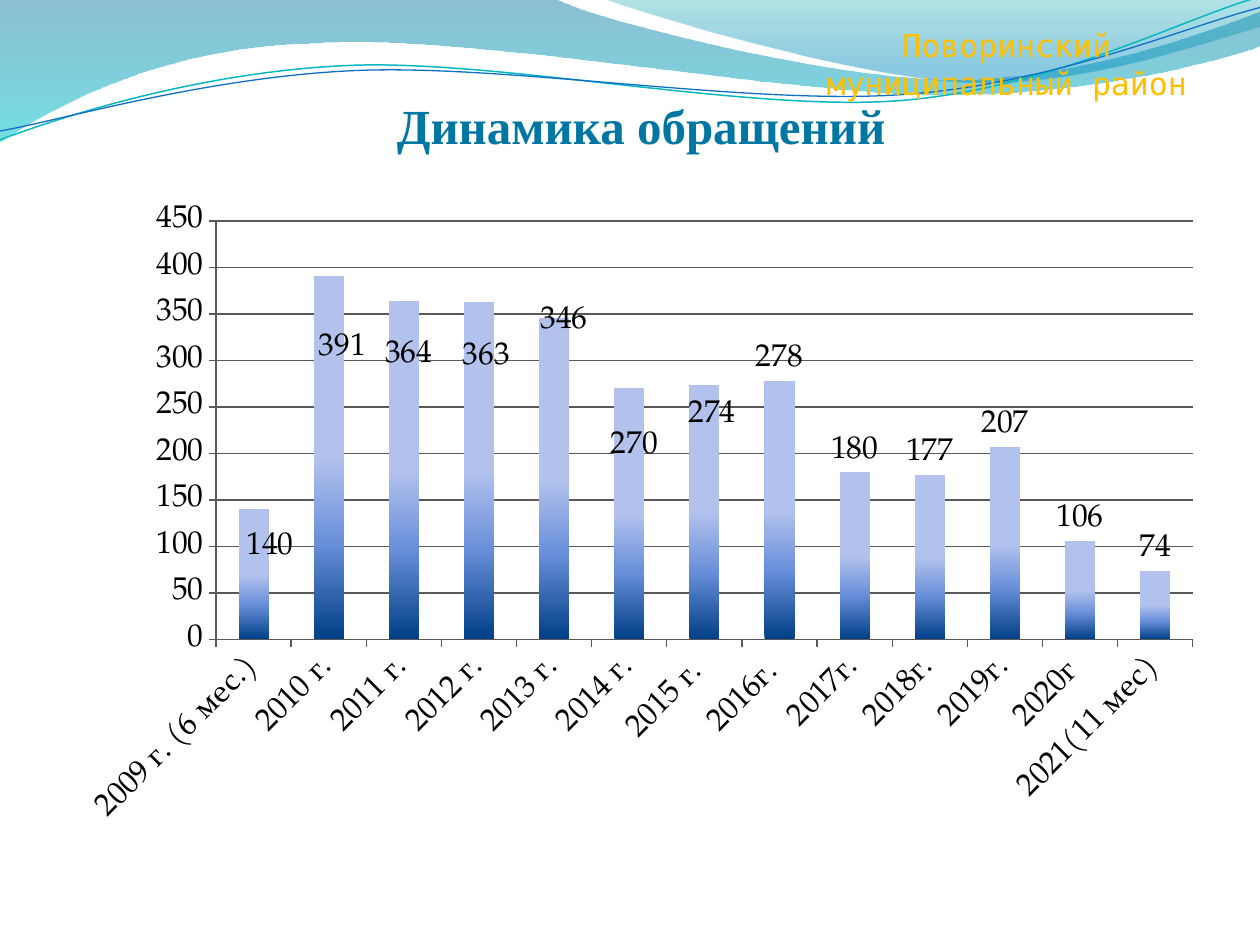
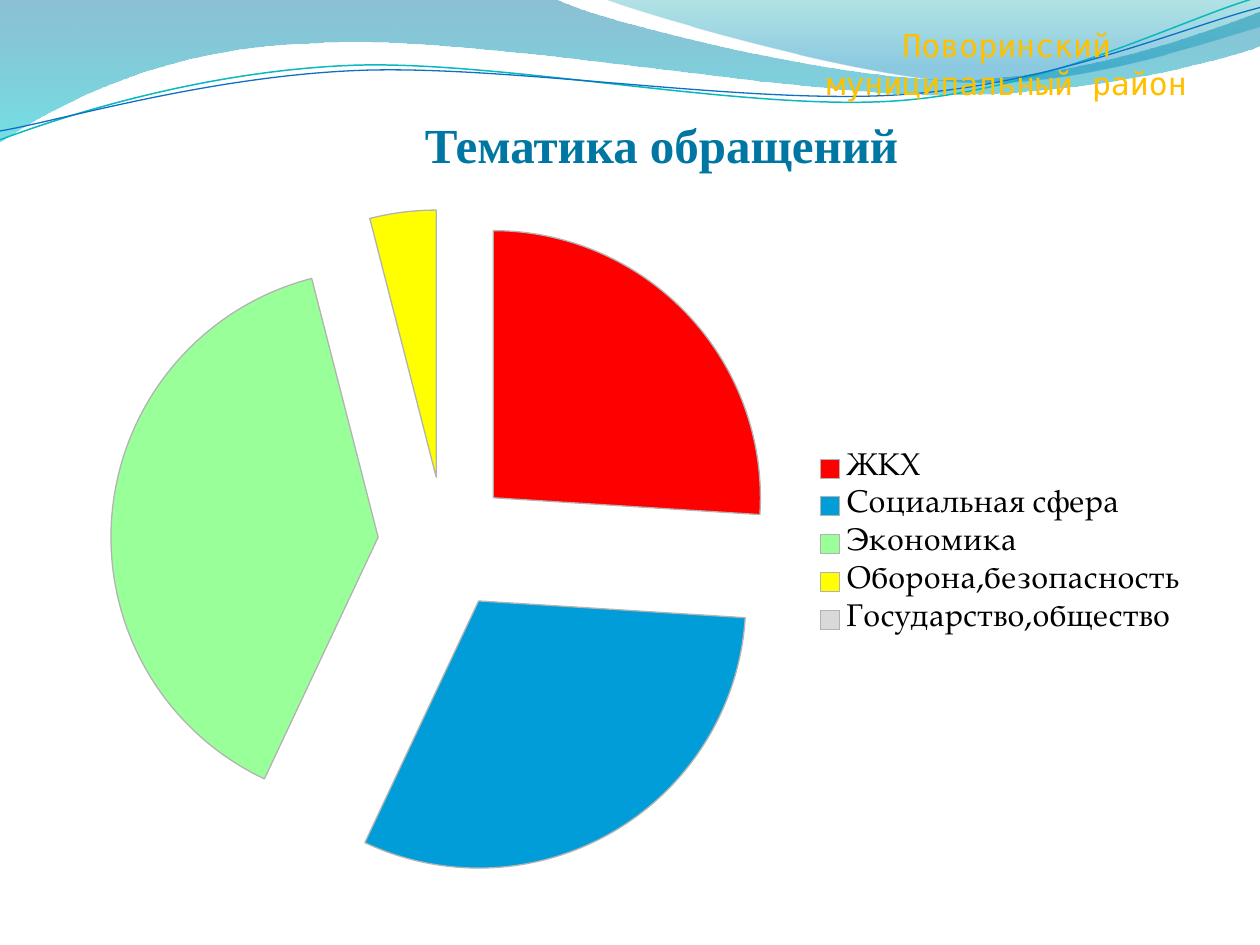
from lxml.etree import SubElement
from pptx import Presentation
from pptx.chart.data import CategoryChartData
from pptx.dml.color import RGBColor
from pptx.enum.chart import (XL_CHART_TYPE, XL_LABEL_POSITION,
                             XL_LEGEND_POSITION, XL_TICK_MARK)
from pptx.enum.text import MSO_ANCHOR, MSO_AUTO_SIZE, PP_ALIGN
from pptx.oxml import parse_xml
from pptx.oxml.ns import nsdecls, qn
from pptx.util import Inches, Pt

HEADER = "Поворинский муниципальный район"
GOLD, BLUE, AXIS, EDGE = "FFC000", "0076A3", "595959", "B3B3B3"
CHART_FONT = "TeX Gyre Pagella"

# Each outline is a start point, then lines (x, y) and curves (three points).
# A gradient stop is (percent, colour, opacity percent).
BANDS = [
    ([(0, 0), (4.4, -0.01), (4.76, 0.17, 6.64, 0.63, 7.58, 0.63),
      (8.53, 0.63, 9.58, 0.26, 10, 0.09), (10.01, 0.36),
      (9.83, 0.44, 8.7, 0.76, 7.46, 0.75),
      (6.22, 0.75, 3.82, 0.28, 2.57, 0.34),
      (1.29, 0.36, 0.46, 0.83, -0.01, 1.13)],
     [(0, "0074A1", 45), (100, "00C6CF", 55)]),
    ([(4.79, -0.01), (5.09, 0.11, 6.82, 0.62, 7.69, 0.65),
      (8.56, 0.69, 9.61, 0.32, 10, 0.21), (10, 0)],
     [(0, "00A1A9", 30), (80, "008BBF", 45)]),
]
WAVES = [
    ([(0, 1.11), (0.48, 0.93, 1.58, 0.57, 2.77, 0.52),
      (3.95, 0.47, 5.93, 0.89, 7.13, 0.8),
      (8.33, 0.71, 9.38, 0.15, 9.98, -0.02)], "0AB8BF", 0.85),
    ([(0, 1.04), (0.47, 0.96, 1.64, 0.61, 2.83, 0.56),
      (4.03, 0.51, 5.97, 0.84, 7.17, 0.75),
      (8.36, 0.67, 9.41, 0.21, 10, 0.06)], "0F6FC6", 0.75),
]

YEARS = [("2009 г. (6 мес.)", 140), ("2010 г.", 391), ("2011 г.", 364),
         ("2012 г.", 363), ("2013 г.", 346), ("2014 г.", 270),
         ("2015 г. ", 274), ("2016г. ", 278), ("2017г.", 180),
         ("2018г.", 177), ("2019г.", 207), ("2020г ", 106),
         ("2021(11 мес)", 74)]
# Shift of the first labels from the bar tops, in inches.
SHIFTS = [(0.13, 0.47), (0.11, 0.74), (0.04, 0.6), (0.06, 0.61),
          (0.08, 0.2), (0.04, 0.63), (0.06, 0.41)]
BAR_STOPS = [(0, "003F87", 100), (27, "6A90DA", 100), (50, "B2C2ED", 100)]

TOPICS = [("ЖКХ", 26, "FF0000"), ("Социальная сфера", 31, "009DD9"),
          ("Экономика", 39, "99FF99"), ("Оборона,безопасность", 4, "FFFF00"),
          ("Государство,общество", 0, "D9D9D9")]


def rgb(code):
    return RGBColor.from_string(code)


def place(shape, box):
    shape.left, shape.top, shape.width, shape.height = map(Inches, box)


def write(shape, text, size=18, font="Times New Roman", color=BLUE, bold=False,
          align=PP_ALIGN.CENTER, anchor=MSO_ANCHOR.TOP, indent=0, wrap=True):
    frame = shape.text_frame
    frame.word_wrap, frame.vertical_anchor = wrap, anchor
    frame.auto_size = MSO_AUTO_SIZE.SHAPE_TO_FIT_TEXT
    par = frame.paragraphs[0]
    par.alignment = align
    props = par._p.get_or_add_pPr()
    props.set("marL", "0")
    props.set("indent", str(Inches(indent)))
    run = par.add_run()
    run.text = text
    style(run.font, size, font, color, bold)


def style(font, size=18, name=CHART_FONT, color="000000", bold=False):
    font.size, font.name, font.bold = Pt(size), name, bold
    font.color.rgb = rgb(color)


def blend(fill, host, stops, angle):
    """Fill with a linear gradient; host is the element that holds the fill."""
    fill.gradient()
    fill.gradient_angle = angle
    holder = next(host.iter(qn("a:gsLst")))
    for old in list(holder):
        holder.remove(old)
    for pos, code, alpha in stops:
        stop = SubElement(holder, qn("a:gs"), pos=str(pos * 1000))
        tint = SubElement(stop, qn("a:srgbClr"), val=code)
        if alpha < 100:
            SubElement(tint, qn("a:alpha"), val=str(alpha * 1000))


def draw(slide, outline, closed):
    """Build the outline from its corners, then bend its curved parts."""
    first, *rest = [tuple(map(Inches, part[-2:])) for part in outline]
    pen = slide.shapes.build_freeform(*first)
    pen.add_line_segments(rest, close=closed)
    shape = pen.convert_to_shape()
    shape.shadow.inherit = False
    sides = list(shape._element.iter(qn("a:lnTo")))
    for side, part in zip(sides, outline[1:]):
        if len(part) == 2:
            continue
        side.tag = qn("a:cubicBezTo")
        side.remove(side[0])
        for x, y in zip(part[::2], part[1::2]):
            SubElement(side, qn("a:pt"), x=str(Inches(x) - shape.left),
                       y=str(Inches(y) - shape.top))
    return shape


def decorate(slide):
    """Draw the bands and waves, then hand them to the slide's layout."""
    parts = []
    for outline, stops in BANDS:
        band = draw(slide, outline, True)
        blend(band.fill, band._element.spPr, stops, 270)
        band.line.fill.background()
        parts.append(band)
    for outline, color, width in WAVES:
        wave = draw(slide, outline, False)
        wave.fill.background()
        wave.line.color.rgb = rgb(color)
        wave.line.width = Pt(width)
        parts.append(wave)
    for part in parts:
        slide.slide_layout.shapes.element.append(part._element)


def start(deck, title, box, **look):
    slide = deck.slides.add_slide(deck.slide_layouts[5])
    place(slide.shapes.title, box)
    write(slide.shapes.title, title, size=28, bold=True, indent=0.49,
          anchor=MSO_ANCHOR.MIDDLE, **look)
    label = slide.shapes.add_textbox(*map(Inches, (6.17, 0.16, 3.64, 0.4)))
    write(label, HEADER, font="DejaVu Sans Mono", color=GOLD)
    return slide


def layout(x, y, **size):
    """Make a manual chart layout from fractions of the chart."""
    items = {"x": x, "y": y, **size}
    tags = "".join(f'<c:{k} val="{v:.4f}"/>' for k, v in items.items())
    modes = ('<c:layoutTarget val="inner"/><c:xMode val="edge"/>'
             '<c:yMode val="edge"/>' if size else "")
    return parse_xml(f'<c:layout {nsdecls("c")}><c:manualLayout>{modes}{tags}'
                     '</c:manualLayout></c:layout>')


def graph(slide, kind, rows, box, area):
    data = CategoryChartData()
    data.categories = [row[0] for row in rows]
    data.add_series("Series 1", [row[1] for row in rows])
    chart = slide.shapes.add_chart(kind, *map(Inches, box), data).chart
    chart.has_title = chart.has_legend = False
    style(chart.font)
    plot = chart._chartSpace.chart.plotArea
    for old in plot.findall(qn("c:layout")):
        plot.remove(old)
    plot.insert(0, layout(**area))
    return chart


def add_bars(slide):
    box = (0.55, 1.53, 9.1, 5.11)
    chart = graph(slide, XL_CHART_TYPE.COLUMN_CLUSTERED, YEARS, box,
                  dict(x=0.128, y=0.044, w=0.852, h=0.65))
    plot = chart.plots[0]
    plot.gap_width, plot.vary_by_categories = 150, False
    value, cat = chart.value_axis, chart.category_axis
    value.minimum_scale, value.maximum_scale, value.major_unit = 0, 450, 50
    value.has_major_gridlines = True
    for line in (value.major_gridlines.format.line,
                 value.format.line, cat.format.line):
        line.color.rgb = rgb(AXIS)
        line.width = Pt(0.75)
    for axis in (value, cat):
        axis.major_tick_mark = XL_TICK_MARK.OUTSIDE
        style(axis.tick_labels.font)
    cat._element.txPr.bodyPr.set("rot", str(-45 * 60000))

    series = plot.series[0]
    blend(series.format.fill, series._element, BAR_STOPS, 90)
    labels = series.data_labels
    labels.show_value, labels.position = True, XL_LABEL_POSITION.OUTSIDE_END
    style(labels.font)
    for leader in labels._element.iter(qn("c:showLeaderLines")):
        leader.set("val", "0")
    for i in range(len(SHIFTS)):
        label = series.points[i].data_label
        style(label.font)
        label.position = XL_LABEL_POSITION.OUTSIDE_END
    for node, (dx, dy) in zip(labels._element.findall(qn("c:dLbl")), SHIFTS):
        node.insert(1, layout(dx / box[2], dy / box[3]))


def add_pie(slide):
    chart = graph(slide, XL_CHART_TYPE.PIE, TOPICS, (0.62, 1.53, 8.91, 5.58),
                  dict(x=0.029, y=0.024, w=0.595, h=0.95))
    chart.has_legend = True
    chart.legend.position = XL_LEGEND_POSITION.RIGHT
    chart.legend.include_in_layout = False
    style(chart.legend.font)
    series = chart.plots[0].series[0]
    for i, (_, _, color) in enumerate(TOPICS):
        look = series.points[i].format
        look.fill.solid()
        look.fill.fore_color.rgb = rgb(color)
        look.line.color.rgb = rgb(EDGE)
        look.line.width = Pt(0.75)
    burst = parse_xml(f'<c:explosion {nsdecls("c")} val="25"/>')
    series._element.find(qn("c:dPt")).addprevious(burst)


def main():
    deck = Presentation()
    deck.slide_width, deck.slide_height = Inches(10), Inches(7.5)
    trend = start(deck, "Динамика обращений", (2.56, 0.71, 4.62, 0.57),
                  align=PP_ALIGN.LEFT, wrap=False)
    decorate(trend)
    add_bars(trend)
    add_pie(start(deck, "Тематика обращений", (0.16, 0.86, 9.69, 0.57)))
    deck.save("out.pptx")


if __name__ == "__main__":
    main()
